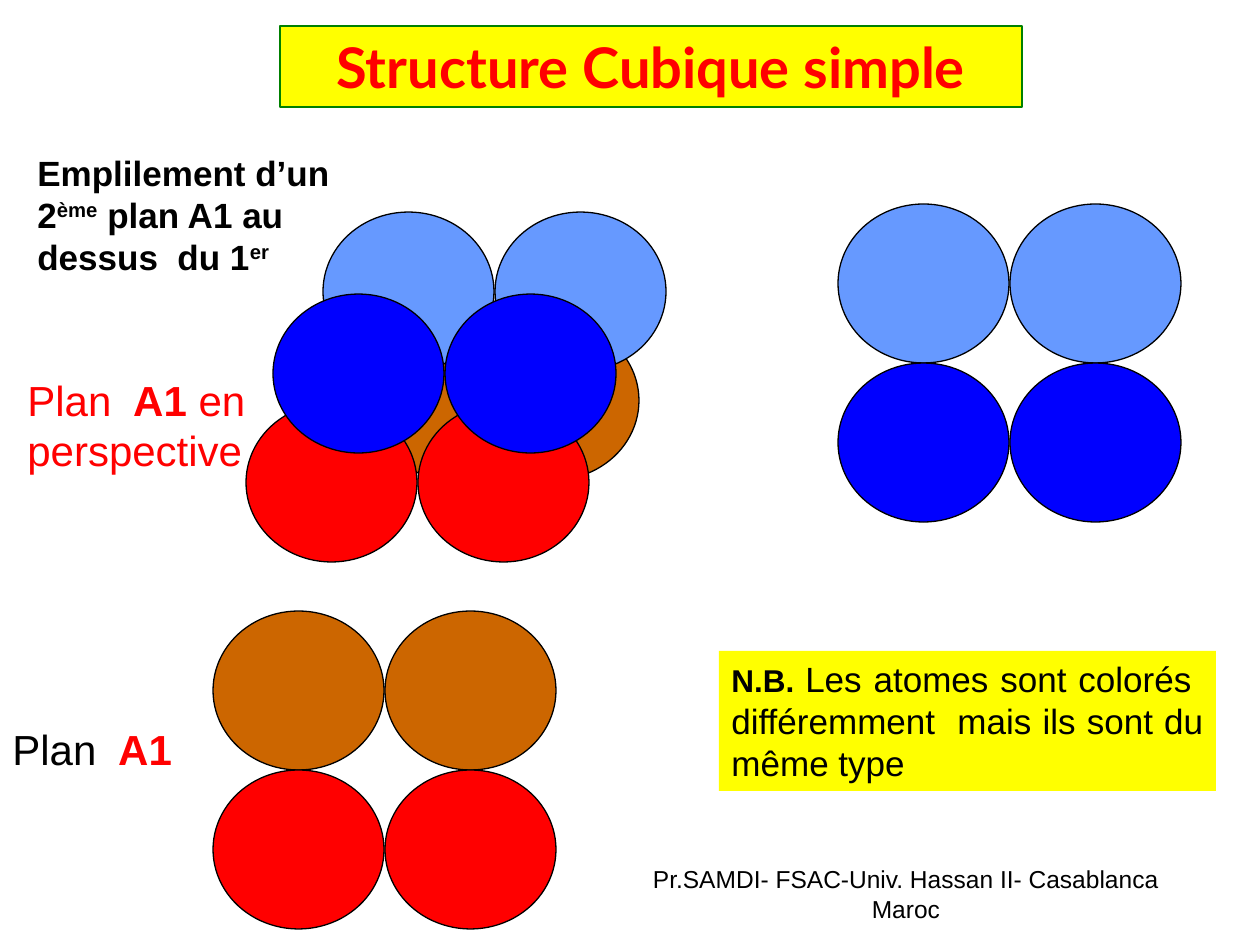
from pptx import Presentation
from pptx.dml.color import RGBColor
from pptx.enum.shapes import MSO_SHAPE
from pptx.enum.text import MSO_ANCHOR, PP_ALIGN
from pptx.util import Emu, Pt

PX = 914400 / 126
ATOM_WIDTH, ATOM_HEIGHT, ATOM_PITCH = 171, 159, 172
COLORS = {
    "yellow": "FFFF00",
    "green": "008000",
    "red": "FF0000",
    "brown": "CC6600",
    "light_blue": "6699FF",
    "blue": "0000FF",
    "black": "000000",
    "white": "FFFFFF",
}


def px(length):
    return Emu(round(length * PX))


def rgb(name):
    return RGBColor.from_string(COLORS[name])


def add_panel(shapes, kind, box, fill, line=None):
    panel = shapes.add_shape(kind, *map(px, box))
    panel.shadow.inherit = False
    panel.fill.solid()
    panel.fill.fore_color.rgb = rgb(fill)
    if line:
        panel.line.color.rgb = rgb(line)
        panel.line.width = Pt(0.75)
    else:
        panel.line.fill.background()
    return panel


def add_lattice(shapes, left, top, back, front, shift):
    dx, dy = shift
    atoms = [
        (left, top, back),
        (left + ATOM_PITCH, top, back),
        (left + dx + ATOM_PITCH, top + dy, front),
        (left + dx, top + dy, front),
    ]
    for x, y, color in atoms:
        add_panel(shapes, MSO_SHAPE.OVAL, (x, y, ATOM_WIDTH, ATOM_HEIGHT), color, "black")


def write(holder, pieces, size, color="black", font="Arial", align=PP_ALIGN.LEFT, wrap=True):
    frame = holder.text_frame
    frame.word_wrap = wrap
    frame.vertical_anchor = MSO_ANCHOR.TOP
    paragraph = frame.paragraphs[0]
    paragraph.alignment = align
    for text, changes in pieces:
        run = paragraph.add_run()
        run.text = text
        run.font.name = font
        run.font.size = Pt(changes.get("size", size))
        run.font.bold = changes.get("bold", False)
        run.font.color.rgb = rgb(changes.get("color", color))
        if changes.get("raised"):
            run._r.get_or_add_rPr().set("baseline", "30000")


def add_label(shapes, box, pieces, size, **style):
    write(shapes.add_textbox(*map(px, box)), pieces, size, **style)


def add_text_panel(shapes, box, fill, pieces, size, line=None, **style):
    write(add_panel(shapes, MSO_SHAPE.RECTANGLE, box, fill, line), pieces, size, **style)


def main():
    presentation = Presentation()
    presentation.slide_width = px(1260)
    presentation.slide_height = px(945)
    shapes = presentation.slides.add_slide(presentation.slide_layouts[6]).shapes
    bold = {"bold": True}
    raised = {"bold": True, "raised": True}
    stacked, oblique = (0, ATOM_HEIGHT), (-50, 82)

    add_text_panel(shapes, (280, 26, 742, 81), "yellow", [("Structure Cubique simple", bold)], 32,
                   line="green", color="red", font="Lato", align=PP_ALIGN.CENTER, wrap=False)

    add_lattice(shapes.add_group_shape().shapes, 296, 321, "brown", "red", oblique)
    add_text_panel(shapes, (0, 717, 199, 63), "white",
                   [("Plan", {}), ("  A1", {"bold": True, "color": "red"})], 24)
    add_lattice(shapes, 213, 611, "brown", "red", stacked)
    add_label(shapes, (15, 368, 262, 115),
              [("Plan", {}), ("  A1 ", bold), ("en perspective", {})], 24, color="red")

    add_lattice(shapes.add_group_shape().shapes, 323, 212, "light_blue", "blue", oblique)
    add_label(shapes, (25, 145, 328, 140),
              [("Emplilement d’un 2", bold), ("ème", raised),
               (" plan A1 au dessus  du 1", bold), ("er", raised)], 20)
    add_lattice(shapes, 838, 204, "light_blue", "blue", stacked)

    add_text_panel(shapes, (719, 651, 497, 140), "yellow",
                   [("N.B. ", {"bold": True, "size": 18}),
                    ("Les atomes sont colorés  différemment  mais ils sont du même type ", {})],
                   20, align=PP_ALIGN.JUSTIFY)
    add_label(shapes, (616, 858, 580, 66),
              [("Pr.SAMDI- FSAC-Univ. Hassan II- Casablanca Maroc", {})], 14, align=PP_ALIGN.CENTER)

    presentation.save("out.pptx")


if __name__ == "__main__":
    main()
